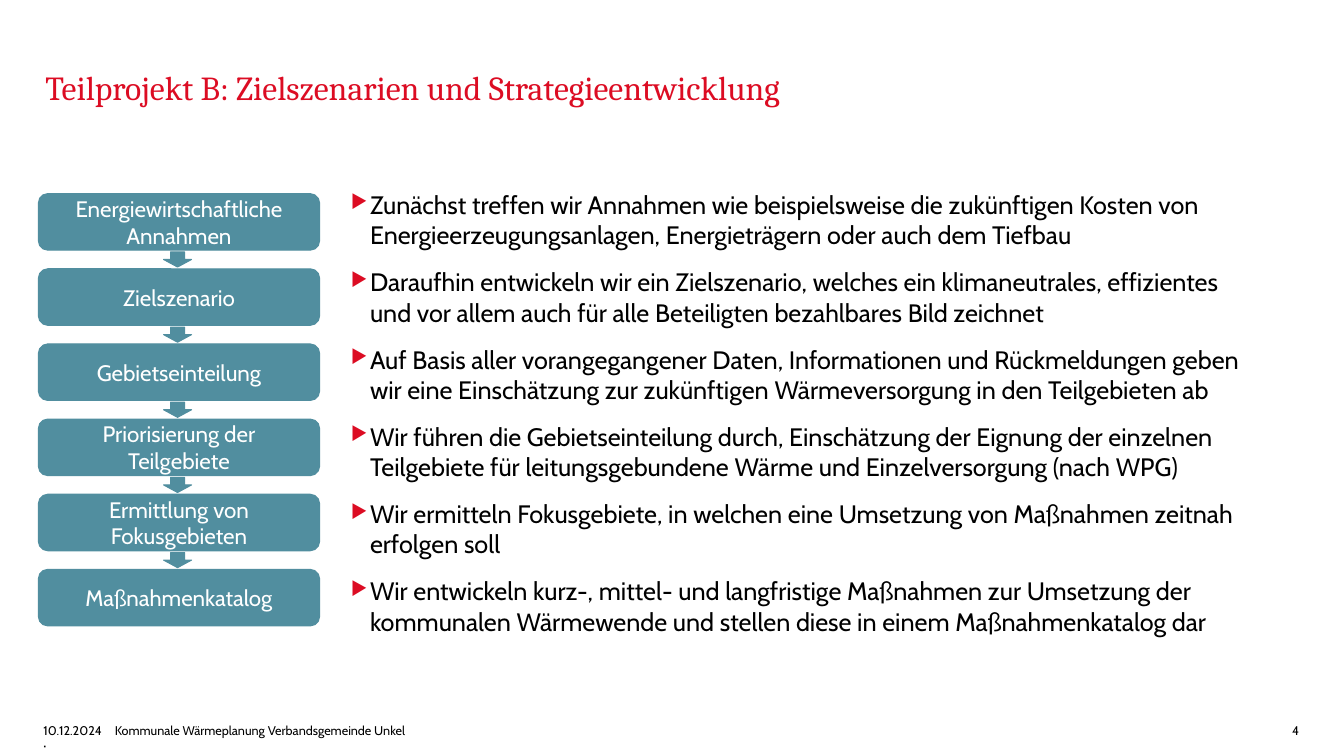
import pptx
import pptx.dml.color
import pptx.enum.shapes
import pptx.enum.text
import pptx.oxml.ns
import pptx.util
from lxml import etree

Pt = pptx.util.Pt
Align = pptx.enum.text.PP_ALIGN
Anchor = pptx.enum.text.MSO_ANCHOR
Preset = pptx.enum.shapes.MSO_SHAPE

RED, TEAL, BLACK, WHITE = "DC0C23", "518E9F", "000000", "FFFFFF"

STEPS = [
    ("Energiewirtschaftliche Annahmen",
     "Zunächst treffen wir Annahmen wie beispielsweise die zukünftigen Kosten von "
     "Energieerzeugungsanlagen, Energieträgern oder auch dem Tiefbau"),
    ("Zielszenario",
     "Daraufhin entwickeln wir ein Zielszenario, welches ein klimaneutrales, effizientes "
     "und vor allem auch für alle Beteiligten bezahlbares Bild zeichnet"),
    ("Gebietseinteilung",
     "Auf Basis aller vorangegangener Daten, Informationen und Rückmeldungen geben "
     "wir eine Einschätzung zur zukünftigen Wärmeversorgung in den Teilgebieten ab"),
    ("Priorisierung der Teilgebiete",
     "Wir führen die Gebietseinteilung durch, Einschätzung der Eignung der einzelnen "
     "Teilgebiete für leitungsgebundene Wärme und Einzelversorgung (nach WPG)"),
    ("Ermittlung von Fokusgebieten",
     "Wir ermitteln Fokusgebiete, in welchen eine Umsetzung von Maßnahmen zeitnah "
     "erfolgen soll"),
    ("Maßnahmenkatalog",
     "Wir entwickeln kurz-, mittel- und langfristige Maßnahmen zur Umsetzung der "
     "kommunalen Wärmewende und stellen diese in einem Maßnahmenkatalog dar"),
]


def color(value):
    """Turn a hex string into a colour."""
    return pptx.dml.color.RGBColor.from_string(value)


def write(para, text, size=9, fill=BLACK, font="Cabin", align=Align.LEFT):
    """Write one formatted span into a paragraph."""
    para.alignment = align
    span = para.add_run()
    span.text = text
    span.font.size = Pt(size)
    span.font.name = font
    span.font.color.rgb = color(fill)


def prepare(box, anchor=Anchor.TOP):
    """Give a box wrapped text without insets and return its frame."""
    frame = box.text_frame
    frame.word_wrap = True
    frame.auto_size = pptx.enum.text.MSO_AUTO_SIZE.NONE
    frame.vertical_anchor = anchor
    frame.margin_left = frame.margin_right = frame.margin_top = frame.margin_bottom = 0
    return frame


def add_bullet(para):
    """Add a red triangle bullet with a hanging indent."""
    properties = para._p.get_or_add_pPr()
    properties.set("marL", str(Pt(13.7)))
    properties.set("indent", str(-Pt(13.7)))
    for tag, name, value in (("buSzPct", "val", "75000"), ("buChar", "char", "▶")):
        bullet = etree.SubElement(properties, pptx.oxml.ns.qn(f"a:{tag}"))
        bullet.set(name, value)
    tint = etree.Element(pptx.oxml.ns.qn("a:buClr"))
    etree.SubElement(tint, pptx.oxml.ns.qn("a:srgbClr")).set("val", RED)
    properties.insert(0, tint)


def add_block(page, preset, left, top, width, height):
    """Add one teal shape of the process chain."""
    block = page.shapes.add_shape(preset, Pt(left), Pt(top), Pt(width), Pt(height))
    block.shadow.inherit = False
    block.fill.solid()
    block.fill.fore_color.rgb = color(TEAL)
    block.line.color.rgb = color(TEAL)
    block.line.width = Pt(0.75)
    return block


def add_title(page, left, top, width, height):
    """Place and fill the title placeholder."""
    title = page.shapes.title
    title.left, title.top, title.width, title.height = map(Pt, (left, top, width, height))
    frame = prepare(title, Anchor.BOTTOM)
    write(frame.paragraphs[0], "Teilprojekt B: Zielszenarien und Strategieentwicklung",
          size=24, fill=RED, font="Cambria")


def add_chain(page, left, top, width, height):
    """Stack the process steps with an arrow in each gap."""
    step_height, arrow_width, arrow_height = 40.4, 20, 10.8
    pitch = (height - step_height) / (len(STEPS) - 1)
    gap = pitch - step_height
    for index, (label, _) in enumerate(STEPS):
        step_top = top + index * pitch
        step = add_block(page, Preset.ROUNDED_RECTANGLE, left, step_top, width, step_height)
        step.text_frame.word_wrap = True
        step.text_frame.vertical_anchor = Anchor.MIDDLE
        write(step.text_frame.paragraphs[0], label, size=16, fill=WHITE, align=Align.CENTER)
        if index:
            add_block(page, Preset.DOWN_ARROW, left + (width - arrow_width) / 2 - 1,
                      step_top - (gap + arrow_height) / 2, arrow_width, arrow_height)


def add_explanations(page, left, top, width, height):
    """List one bulleted explanation for each step."""
    box = page.shapes.add_textbox(Pt(left), Pt(top), Pt(width), Pt(height))
    frame = prepare(box)
    frame.margin_top = Pt(1.4)
    for index, (_, explanation) in enumerate(STEPS):
        para = frame.add_paragraph() if index else frame.paragraphs[0]
        para.space_after = Pt(12)
        add_bullet(para)
        write(para, explanation, size=18)


def add_footer(page, left, top, width, height):
    """Place date, project name and page number along the bottom edge."""
    entries = [
        (0, 46, "10.12.2024  ·", Anchor.TOP, Align.LEFT),
        (51, 463, "Kommunale Wärmeplanung Verbandsgemeinde Unkel", Anchor.MIDDLE, Align.LEFT),
        (width - 34, 34, "4", Anchor.MIDDLE, Align.RIGHT),
    ]
    for offset, entry_width, text, anchor, align in entries:
        box = page.shapes.add_textbox(Pt(left + offset), Pt(top), Pt(entry_width), Pt(height))
        write(prepare(box, anchor).paragraphs[0], text, align=align)


def build_process_page(deck):
    """Build the page with the process chain and its explanations."""
    page = deck.slides.add_slide(deck.slide_layouts[5])
    add_title(page, 32.4, 20.2, 819.4, 56.2)
    add_chain(page, 27.4, 138.3, 200.9, 308.8)
    add_explanations(page, 250.6, 133.9, 641.5, 360.7)
    add_footer(page, 31, 516.2, 897, 10.8)


def main():
    """Create and save the deck."""
    deck = pptx.Presentation()
    deck.slide_width, deck.slide_height = Pt(960), Pt(540)
    build_process_page(deck)
    deck.save("out.pptx")


if __name__ == "__main__":
    main()
